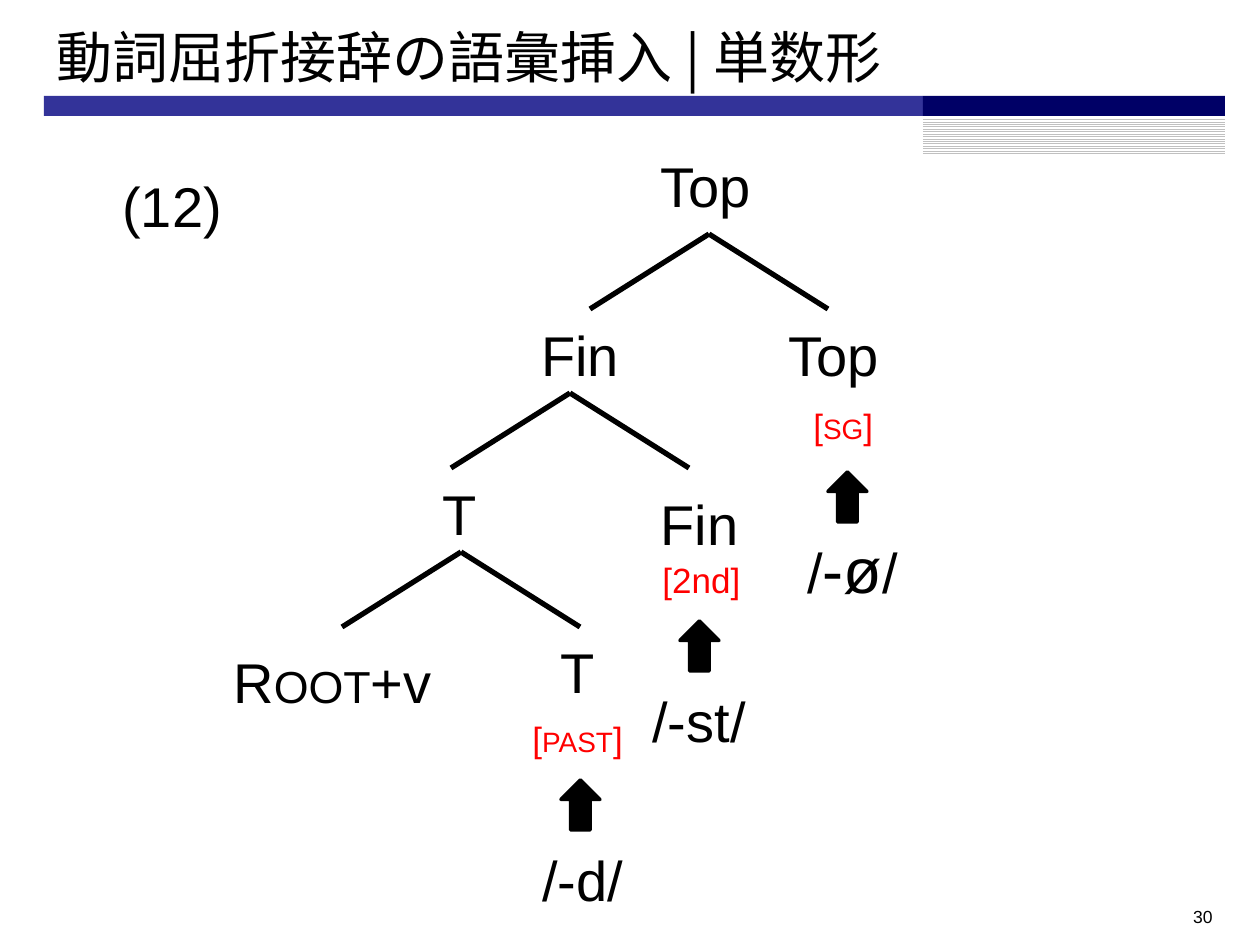
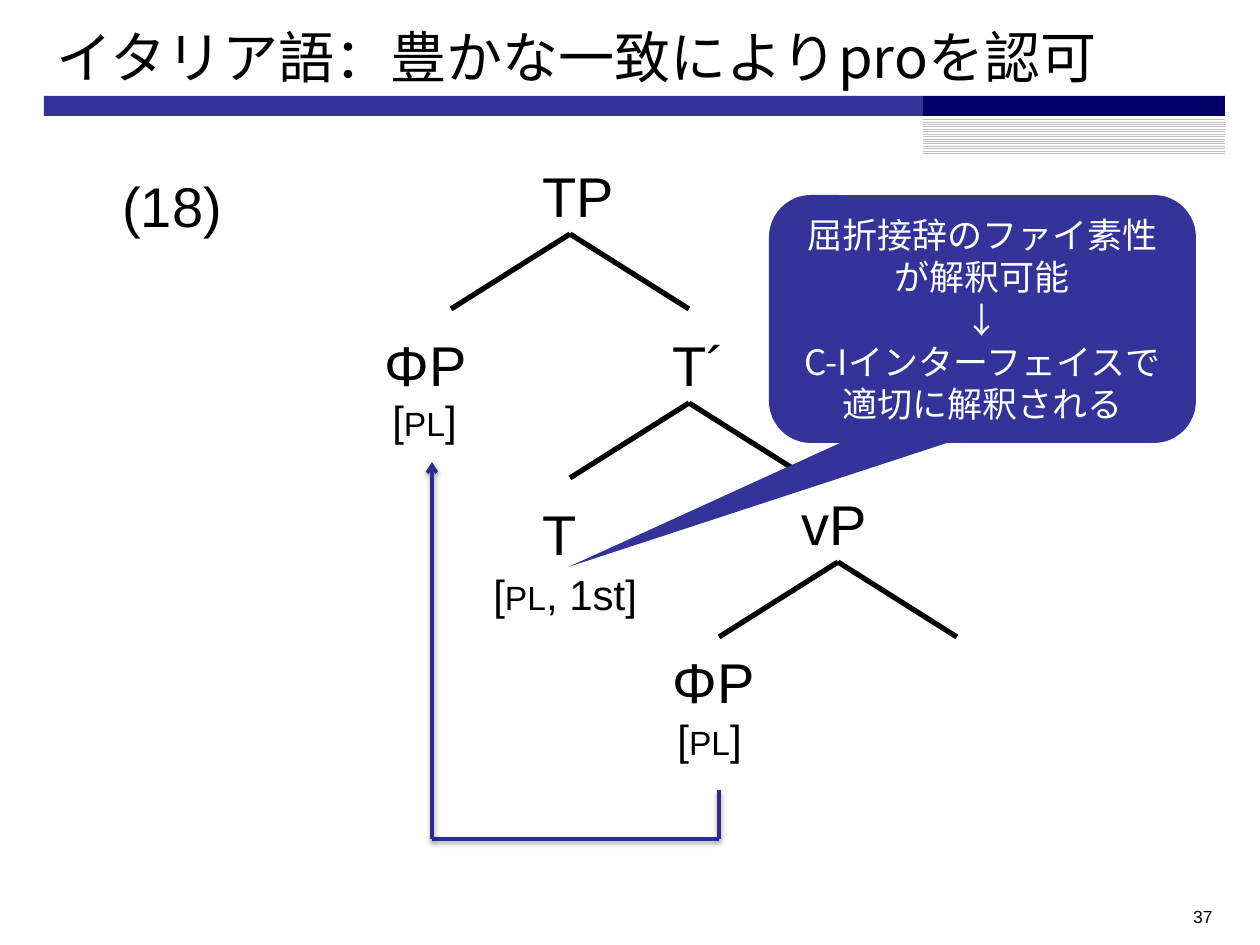
from typing import NamedTuple

from lxml.etree import SubElement
from pptx import Presentation
from pptx.dml.color import RGBColor
from pptx.enum.dml import MSO_PATTERN as Pattern
from pptx.enum.shapes import MSO_CONNECTOR as Link, MSO_SHAPE as Form
from pptx.enum.text import MSO_ANCHOR as Anchor, MSO_AUTO_SIZE as Fit, PP_ALIGN as Align
from pptx.oxml.ns import qn
from pptx.util import Emu, Pt

SCALE = 914400 / 126
SANS, CJK = "Arial", "Noto Sans CJK JP"
BLACK, WHITE, RED = "000000", "FFFFFF", "FF0000"
BLUE, NAVY, GREY, INK = "333399", "000066", "C0C0C0", "2D2D8A"
REACH, DROP = 119, 75


class Box(NamedTuple):
    x: int
    y: int
    w: int
    h: int


class Label(NamedTuple):
    body: str
    box: Box
    size: int = 32
    tint: str = BLACK
    mid: int = 0


class Point(NamedTuple):
    x: int
    y: int


class Page(NamedTuple):
    title: str
    number: str
    peaks: list[Point]
    labels: list[Label]


def px(*spans: int) -> list[Emu]:
    return [Emu(round(span * SCALE)) for span in spans]


def color(code: str) -> RGBColor:
    return RGBColor.from_string(code)


def write(frame, body: str, *, size: int = 32, font: str = SANS, tint: str = BLACK,
          align=Align.LEFT, anchor=Anchor.TOP, mid: int = 0) -> None:
    """Text between tildes takes the mid size, or small capitals if there is none."""
    frame.word_wrap = True
    frame.auto_size = Fit.NONE
    frame.vertical_anchor = anchor
    for row, line in enumerate(body.split("\n")):
        para = frame.paragraphs[0] if row == 0 else frame.add_paragraph()
        para.alignment = align
        for turn, part in enumerate(line.split("~")):
            run = para.add_run()
            run.text = part
            inner = turn % 2 == 1
            run.font.size = Pt(mid if inner and mid else size)
            run.font.name = font
            run.font.color.rgb = color(tint)
            props = run.font._element
            SubElement(props, qn("a:ea"), typeface=font)
            if inner and not mid:
                props.set("cap", "small")


def place(slide, label: Label, **style) -> None:
    frame = slide.shapes.add_textbox(*px(*label.box)).text_frame
    write(frame, label.body, size=label.size, tint=label.tint, mid=label.mid, **style)


def block(slide, form, box: Box, tint: str):
    shape = slide.shapes.add_shape(form, *px(*box))
    shape.shadow.inherit = False
    shape.fill.solid()
    shape.fill.fore_color.rgb = color(tint)
    shape.line.fill.background()
    return shape


def join(slide, start: Point, end: Point, tint: str = BLACK, width: int = 3,
         head: bool = False, shade: bool = False) -> None:
    line = slide.shapes.add_connector(Link.STRAIGHT, *px(*start, *end))
    line.line.color.rgb = color(tint)
    line.line.width = Pt(width)
    props = line._element.spPr
    if head:
        SubElement(props.find(qn("a:ln")), qn("a:tailEnd"), type="arrow")
    glow = SubElement(props, qn("a:effectLst"))
    if shade:
        cast = SubElement(glow, qn("a:outerShdw"), blurRad=str(Pt(3.1)),
                          dist=str(Pt(1.6)), dir="5400000", rotWithShape="0")
        black = SubElement(cast, qn("a:srgbClr"), val=BLACK)
        SubElement(black, qn("a:alpha"), val="38000")


def base(deck, page: Page):
    slide = deck.slides.add_slide(deck.slide_layouts[5])
    block(slide, Form.RECTANGLE, Box(44, 96, 879, 20), BLUE)
    hatch = block(slide, Form.RECTANGLE, Box(923, 117, 302, 37), WHITE)
    hatch.fill.patterned()
    hatch.fill.pattern = Pattern.LIGHT_HORIZONTAL
    hatch.fill.fore_color.rgb = color(GREY)
    hatch.fill.back_color.rgb = color(WHITE)
    block(slide, Form.RECTANGLE, Box(923, 96, 302, 20), NAVY)

    title = slide.shapes.title
    title.left, title.top, title.width, title.height = px(44, 16, 1182, 80)
    write(title.text_frame, page.title, font=CJK, anchor=Anchor.MIDDLE)
    place(slide, Label(page.number, Box(931, 900, 294, 37), 10), align=Align.RIGHT)

    for peak in page.peaks:
        for side in (-REACH, REACH):
            join(slide, Point(peak.x + side, peak.y + DROP), peak)
    for label in page.labels:
        place(slide, label)
    return slide


VERB = Page(
    "動詞屈折接辞の語彙挿入 | 単数形", "30",
    [Point(709, 234), Point(570, 393), Point(461, 552)],
    [
        Label("(12)", Box(110, 165, 128, 81)),
        Label("Top", Box(648, 145, 121, 81)),
        Label("Top", Box(776, 314, 121, 81)),
        Label("Fin", Box(529, 314, 121, 81)),
        Label("Fin", Box(648, 483, 121, 81)),
        Label("T", Box(430, 473, 82, 81)),
        Label("T", Box(548, 631, 82, 81)),
        Label("R~oot~+v", Box(221, 641, 230, 81)),
        Label("[~sg~]", Box(801, 398, 100, 55), 20, RED),
        Label("[2nd]", Box(650, 552, 110, 55), 20, RED),
        Label("[~past~]", Box(520, 711, 120, 55), 20, RED),
        Label("/-d/", Box(530, 839, 110, 81)),
        Label("/-st/", Box(640, 680, 128, 81)),
        Label("/~-ø~/", Box(795, 524, 122, 89), mid=36),
    ],
)

AGREE = Page(
    "イタリア語：豊かな一致によりproを認可", "37",
    [Point(570, 234), Point(689, 403), Point(838, 562)],
    [
        Label("(18)", Box(110, 165, 128, 81)),
        Label("TP", Box(530, 155, 110, 81)),
        Label("T´", Box(660, 324, 89, 81)),
        Label("ΦP", Box(372, 324, 110, 81)),
        Label("T", Box(530, 493, 79, 81)),
        Label("vP", Box(789, 483, 110, 81)),
        Label("ΦP", Box(660, 641, 110, 81)),
        Label("[~pl~]", Box(380, 388, 100, 63), 24),
        Label("[~pl~, 1st]", Box(481, 562, 179, 63), 24),
        Label("[~pl~]", Box(665, 707, 100, 63), 24),
    ],
)

NOTE = "屈折接辞のファイ素性が解釈可能\n↓\nC-Iインターフェイスで\n適切に解釈される"


def main() -> None:
    deck = Presentation()
    deck.slide_width, deck.slide_height = px(1260, 945)

    verb = base(deck, VERB)
    for spot in (Point(561, 780), Point(680, 621), Point(828, 472)):
        arrow = block(verb, Form.UP_ARROW, Box(*spot, 39, 50), BLACK)
        arrow.line.color.rgb = color(BLACK)
        arrow.line.width = Pt(2)

    agree = base(deck, AGREE)
    route = [Point(719, 790), Point(719, 839), Point(432, 839), Point(432, 462)]
    for start, end in zip(route, route[1:]):
        join(agree, start, end, INK, 2, head=end == route[-1], shade=True)
    call = block(agree, Form.ROUNDED_RECTANGULAR_CALLOUT, Box(769, 195, 427, 248), BLUE)
    for spot, value in enumerate((-0.97, 1, 0.17)):
        call.adjustments[spot] = value
    write(call.text_frame, NOTE, size=20, font=CJK, tint=WHITE,
          align=Align.CENTER, anchor=Anchor.MIDDLE)

    deck.save("out.pptx")


if __name__ == "__main__":
    main()
